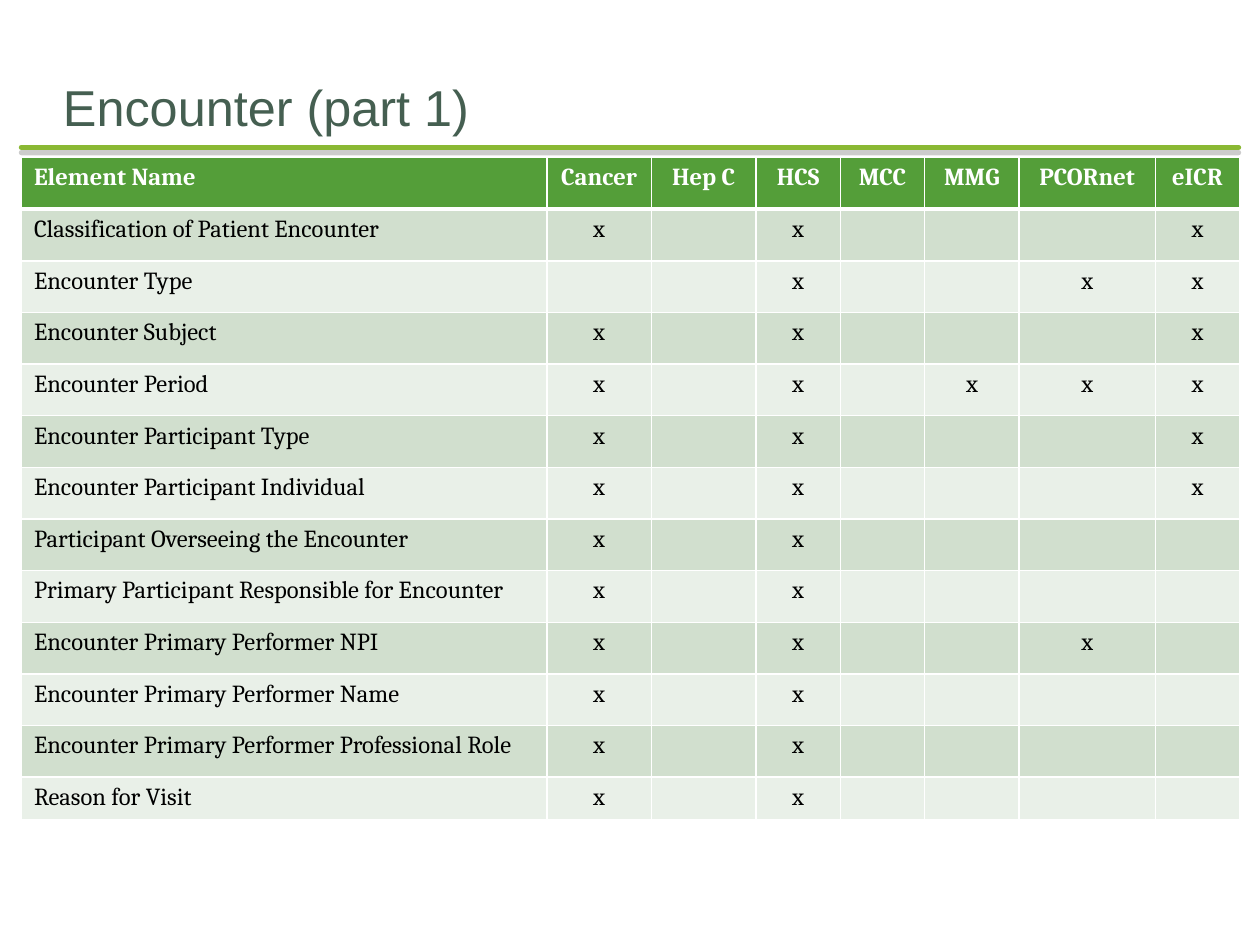
from lxml.etree import SubElement as Sub
from pptx import Presentation
from pptx.dml.color import RGBColor as RGB
from pptx.enum.shapes import MSO_CONNECTOR as Conn
from pptx.enum.text import MSO_ANCHOR as Anchor, PP_ALIGN as Align
from pptx.oxml.ns import qn
from pptx.util import Inches, Pt

COLORS = {
    "title": "455F51", "rule": "8AB833", "shade": "808080",
    "head": "549E39", "odd": "D1DFCE", "even": "E9F0E8",
    "white": "FFFFFF", "black": "000000",
}
HEADS = ["Element Name", "Cancer", "Hep C", "HCS", "MCC", "MMG", "PCORnet", "eICR"]
WIDTHS = [4.17, 0.83, 0.83, 0.67, 0.67, 0.75, 1.08, 0.67]
ROWS = [
    ("Classification of Patient Encounter", "Cancer HCS eICR"),
    ("Encounter Type", "HCS PCORnet eICR"),
    ("Encounter Subject", "Cancer HCS eICR"),
    ("Encounter Period", "Cancer HCS MMG PCORnet eICR"),
    ("Encounter Participant Type", "Cancer HCS eICR"),
    ("Encounter Participant Individual", "Cancer HCS eICR"),
    ("Participant Overseeing the Encounter", "Cancer HCS"),
    ("Primary Participant Responsible for Encounter", "Cancer HCS"),
    ("Encounter Primary Performer NPI", "Cancer HCS PCORnet"),
    ("Encounter Primary Performer Name", "Cancer HCS"),
    ("Encounter Primary Performer Professional Role", "Cancer HCS"),
    ("Reason for Visit", "Cancer HCS"),
]


def color(name):
    return RGB.from_string(COLORS[name])


def add_run(para, text, font, size, hue, bold=False):
    run = para.add_run()
    run.text = text
    run.font.name = font
    run.font.size = Pt(size)
    run.font.bold = bold
    run.font.color.rgb = color(hue)


def add_title(slide, text):
    box = slide.shapes.add_textbox(Inches(0.5), Inches(0.5), Inches(9), Inches(0.58))
    frame = box.text_frame
    frame.word_wrap = True
    frame.vertical_anchor = Anchor.BOTTOM
    frame.margin_left = frame.margin_right = frame.margin_bottom = 0
    frame.margin_top = Inches(0.05)
    add_run(frame.paragraphs[0], text, "Arial", 28.8, "title")


def add_rule(slide):
    """Draw the round-ended line under the title, with its drop shadow."""
    y = Inches(1.17)
    rule = slide.shapes.add_connector(Conn.STRAIGHT, Inches(0.17), y, Inches(9.83), y)
    rule.line.color.rgb = color("rule")
    rule.line.width = Pt(3)
    props = rule._element.spPr
    props.find(qn("a:ln")).set("cap", "rnd")
    effects = Sub(props, qn("a:effectLst"))
    shadow = Sub(effects, qn("a:outerShdw"), dist=str(Pt(3)), dir="5400000", rotWithShape="0")
    hue = Sub(shadow, qn("a:srgbClr"), val=COLORS["shade"])
    Sub(hue, qn("a:alpha"), val="40000")


def set_edges(cell, bottom):
    props = cell._tc.get_or_add_tcPr()
    for side, width in (("L", 1), ("R", 1), ("T", 1), ("B", bottom)):
        edge = Sub(props, qn(f"a:ln{side}"), w=str(Pt(width)))
        fill = Sub(edge, qn("a:solidFill"))
        Sub(fill, qn("a:srgbClr"), val=COLORS["white"])


def fill_cell(cell, text, fill, head, center):
    set_edges(cell, 3 if head else 1)
    cell.fill.solid()
    cell.fill.fore_color.rgb = color(fill)
    para = cell.text_frame.paragraphs[0]
    if center:
        para.alignment = Align.CENTER
    if text:
        add_run(para, text, "Cambria", 14, "white" if head else "black", head)
    else:
        end = Sub(para._p, qn("a:endParaRPr"), sz="1400")
        Sub(end, qn("a:latin"), typeface="Cambria")


def add_grid(slide):
    marks = [[name] + ["x" if head in used.split() else "" for head in HEADS[1:]]
             for name, used in ROWS]
    lines = [HEADS] + marks
    heights = [0.41] * len(ROWS) + [0.13]
    frame = slide.shapes.add_table(len(lines), len(HEADS), Inches(0.17), Inches(1.25),
                                   Inches(sum(WIDTHS)), Inches(sum(heights)))
    table = frame.table
    for col, width in zip(table.columns, WIDTHS):
        col.width = Inches(width)
    for r, (line, height) in enumerate(zip(lines, heights)):
        table.rows[r].height = Inches(height)
        fill = "head" if r == 0 else "odd" if r % 2 else "even"
        for c, text in enumerate(line):
            fill_cell(table.cell(r, c), text, fill, r == 0, c > 0)


def main():
    deck = Presentation()
    deck.slide_width, deck.slide_height = Inches(10), Inches(7.5)
    slide = deck.slides.add_slide(deck.slide_layouts[6])
    add_rule(slide)
    add_title(slide, "Encounter (part 1)")
    add_grid(slide)
    deck.save("out.pptx")


if __name__ == "__main__":
    main()
